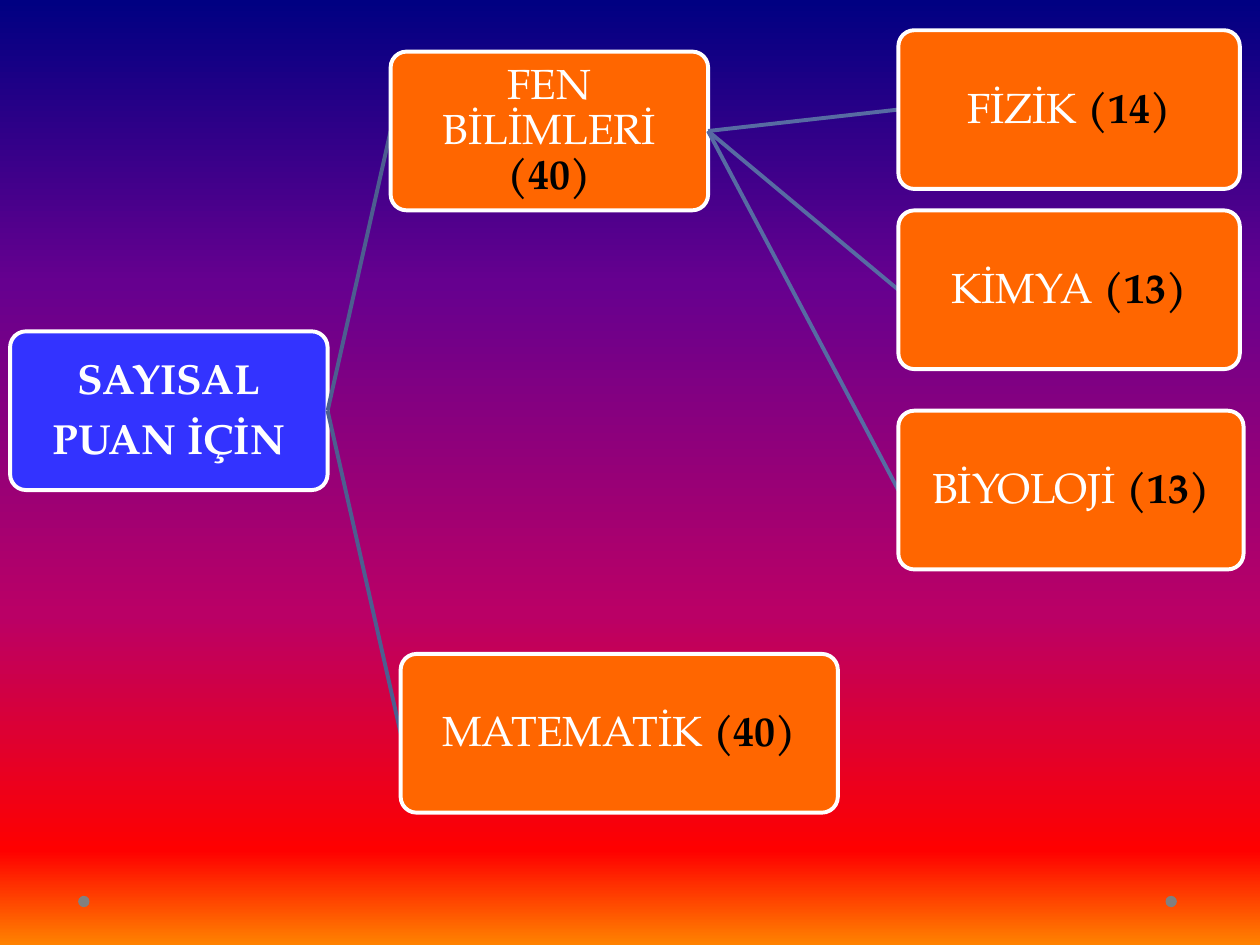
import lxml.etree
import pptx
import pptx.dml.color
import pptx.enum.shapes
import pptx.enum.text
import pptx.oxml.ns
import pptx.util

SHAPES = pptx.enum.shapes.MSO_SHAPE
LEFT_SIDE, RIGHT_SIDE = 1, 3


def colour(hex_code):
    return pptx.dml.color.RGBColor.from_string(hex_code)


def add_span(para, text, font="TeX Gyre Pagella", size=24, color="FFFFFF", bold=False):
    span = para.add_run()
    span.text = text
    span.font.name = font
    span.font.size = pptx.util.Pt(size)
    span.font.bold = bold
    span.font.color.rgb = colour(color)


class Diagram:
    """Draws on one page, on a grid of 100 columns by 75 rows."""

    columns, rows = 100, 75
    box_height = 12.6
    outline = "FFFFFF"
    line_width = pptx.util.Pt(2.25)

    def __init__(self, deck):
        self.page = deck.slides.add_slide(deck.slide_layouts[6])
        self.column = deck.slide_width / self.columns
        self.row = deck.slide_height / self.rows

    def background(self, stops):
        """Fill the page from top to bottom with (percent, colour) stops."""
        fill = self.page.background.fill
        fill.gradient()
        fill.gradient_angle = 270
        qn = pptx.oxml.ns.qn
        stop_list = next(self.page._element.iter(qn("a:gsLst")))
        for stop in list(stop_list):
            stop_list.remove(stop)
        for percent, hex_code in stops:
            stop = lxml.etree.SubElement(stop_list, qn("a:gs"), pos=str(percent * 1000))
            lxml.etree.SubElement(stop, qn("a:srgbClr"), val=hex_code)

    def shape(self, kind, left, top, width, height, fill):
        shape = self.page.shapes.add_shape(
            kind, round(left * self.column), round(top * self.row),
            round(width * self.column), round(height * self.row))
        shape.shadow.inherit = False
        shape.fill.solid()
        shape.fill.fore_color.rgb = colour(fill)
        return shape

    def dot(self, left, top):
        self.shape(SHAPES.OVAL, left, top, 0.9, 0.9, "808080").line.fill.background()

    def box(self, left, top, width, paragraphs, fill="FF6600"):
        """Add a rounded box; each paragraph is a list of (text, format) spans."""
        box = self.shape(SHAPES.ROUNDED_RECTANGLE, left, top, width, self.box_height, fill)
        box.adjustments[0] = 0.1
        box.line.color.rgb = colour(self.outline)
        box.line.width = self.line_width
        frame = box.text_frame
        frame.word_wrap = True
        frame.vertical_anchor = pptx.enum.text.MSO_ANCHOR.MIDDLE
        frame.margin_left = frame.margin_right = pptx.util.Inches(0.06)
        frame.margin_top = frame.margin_bottom = pptx.util.Inches(0.06)
        for index, spans in enumerate(paragraphs):
            para = frame.add_paragraph() if index else frame.paragraphs[0]
            para.alignment = pptx.enum.text.PP_ALIGN.CENTER
            para.line_spacing = 0.9
            para.space_after = pptx.util.Pt(8.4)
            for text, style in spans:
                add_span(para, text, **style)
        return box

    def subject(self, parent, name, count, left, top, width, line_color):
        """Add a subject box with its question count, joined to its parent."""
        count_style = {"color": "000000", "bold": True}
        box = self.box(left, top, width, [[(name + " ", {}), (f"({count})", count_style)]])
        self.join(parent, box, line_color)
        return box

    def join(self, parent, child, color):
        line = self.page.shapes.add_connector(
            pptx.enum.shapes.MSO_CONNECTOR.STRAIGHT, 0, 0, 0, 0)
        line.begin_connect(parent, RIGHT_SIDE)
        line.end_connect(child, LEFT_SIDE)
        line.line.color.rgb = colour(color)
        line.line.width = self.line_width
        lxml.etree.SubElement(line._element.spPr, pptx.oxml.ns.qn("a:effectLst"))
        child._element.addprevious(line._element)


def main():
    deck = pptx.Presentation()
    deck.slide_width = pptx.util.Inches(10)
    deck.slide_height = pptx.util.Inches(7.5)

    diagram = Diagram(deck)
    diagram.background([(0, "000082"), (30, "66008F"), (65, "BA0066"),
                        (90, "FF0000"), (100, "FF8200")])
    for left in (92.5, 6.2):
        diagram.dot(left, 71.1)

    heading = {"bold": True}
    score = diagram.box(0.8, 26.3, 25.2,
                        [[("SAYISAL", heading)], [("PUAN İÇİN", heading)]], fill="3333FF")
    branch, twig = "4D5E90", "576BA3"
    science = diagram.subject(score, "FEN BİLİMLERİ", 40, 31, 4.1, 25.2, branch)
    for name, count, top, width in (("FİZİK", 14, 2.4, 27.1),
                                    ("KİMYA", 13, 16.7, 27.1),
                                    ("BİYOLOJİ", 13, 32.6, 27.4)):
        diagram.subject(science, name, count, 71.3, top, width, twig)
    diagram.subject(score, "MATEMATİK", 40, 31.8, 51.9, 34.7, branch)

    deck.save("out.pptx")


if __name__ == "__main__":
    main()
